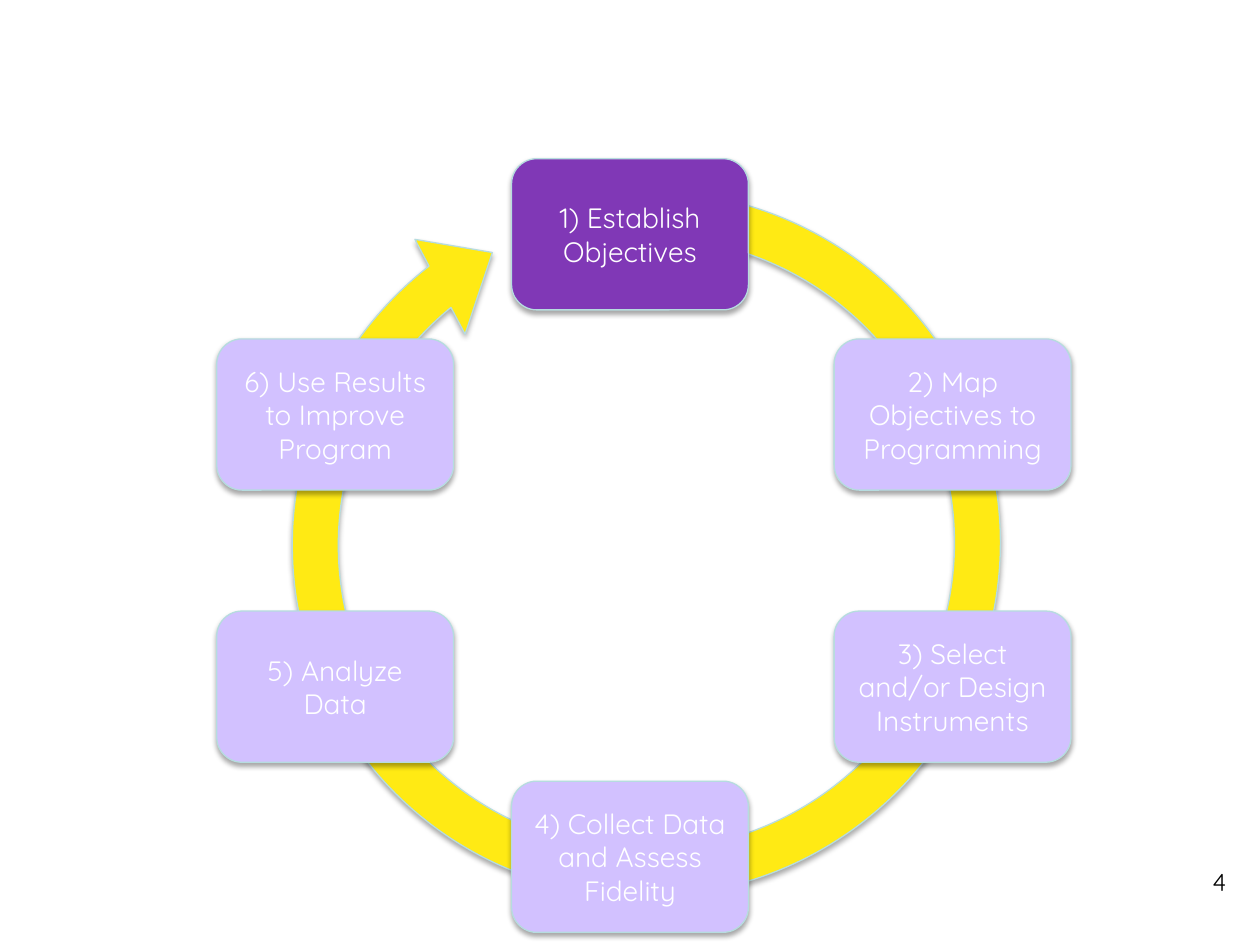
"""Build a slide showing a six-step programme assessment cycle."""
from dataclasses import dataclass

from lxml.etree import SubElement
from pptx import Presentation
from pptx.dml.color import RGBColor
from pptx.enum.shapes import MSO_AUTO_SHAPE_TYPE as ShapeType
from pptx.enum.text import MSO_ANCHOR as Anchor, PP_ALIGN as Align
from pptx.oxml.ns import qn
from pptx.shapes.autoshape import Shape
from pptx.slide import Slide
from pptx.text.text import TextFrame
from pptx.util import Inches, Pt

WHITE = RGBColor(0xFF, 0xFF, 0xFF)
BLACK = RGBColor(0x00, 0x00, 0x00)
YELLOW = RGBColor(0xFF, 0xEA, 0x14)
PURPLE = RGBColor(0x80, 0x38, 0xB6)
LILAC = RGBColor(0xD2, 0xC1, 0xFF)
PALE_TEAL = RGBColor(0xB6, 0xDC, 0xDF)

FONT = "Quicksand"
STEP_WIDTH, STEP_HEIGHT = 1.88, 1.2
LEFT, CENTRE, RIGHT = 1.72, 4.06, 6.62
TOP, UPPER, LOWER, BOTTOM = 1.26, 2.69, 4.85, 6.2
ARROW_ADJUSTMENTS = (0.06, 6.54, 204.56, 3.22, 0.07)


@dataclass(frozen=True)
class Step:
    text: str
    left: float
    top: float
    fill: RGBColor = LILAC


STEPS = (
    Step("1) Establish Objectives", CENTRE, TOP, PURPLE),
    Step("2) Map Objectives to Programming", RIGHT, UPPER),
    Step("3) Select and/or Design Instruments", RIGHT, LOWER),
    Step("4) Collect Data and Assess Fidelity", CENTRE, BOTTOM),
    Step("5) Analyze Data", LEFT, LOWER),
    Step("6) Use Results to Improve Program", LEFT, UPPER),
)


def write_text(frame: TextFrame, text: str, *, size: float, color: RGBColor,
               align: Align, anchor: Anchor) -> None:
    frame.word_wrap = True
    frame.vertical_anchor = anchor
    para = frame.paragraphs[0]
    para.alignment = align
    span = para.add_run()
    span.text = text
    span.font.name = FONT
    span.font.size = Pt(size)
    span.font.color.rgb = color


def add_shadow(shape: Shape) -> None:
    shape.shadow.inherit = False
    effects = shape.element.spPr.find(qn("a:effectLst"))
    shadow = SubElement(effects, qn("a:outerShdw"), blurRad=str(Pt(3.1)),
                        dist=str(Pt(1.8)), dir="5400000", rotWithShape="0")
    color = SubElement(shadow, qn("a:srgbClr"), val=str(BLACK))
    SubElement(color, qn("a:alpha"), val="35000")


def add_outlined_shape(page: Slide, kind: ShapeType, left: float, top: float,
                       width: float, height: float, fill: RGBColor) -> Shape:
    shape = page.shapes.add_shape(kind, Inches(left), Inches(top),
                                  Inches(width), Inches(height))
    shape.fill.solid()
    shape.fill.fore_color.rgb = fill
    shape.line.color.rgb = PALE_TEAL
    shape.line.width = Pt(0.75)
    add_shadow(shape)
    return shape


def add_cycle_arrow(page: Slide) -> None:
    arrow = add_outlined_shape(page, ShapeType.CIRCULAR_ARROW,
                               2.09, 1.26, 6.08, 6.11, YELLOW)
    arrow.rotation = 250.3
    for index, value in enumerate(ARROW_ADJUSTMENTS):
        arrow.adjustments[index] = value


def add_step(page: Slide, step: Step) -> None:
    box = add_outlined_shape(page, ShapeType.ROUNDED_RECTANGLE, step.left, step.top,
                             STEP_WIDTH, STEP_HEIGHT, step.fill)
    write_text(box.text_frame, step.text, size=16, color=WHITE,
               align=Align.CENTER, anchor=Anchor.MIDDLE)


def add_page_number(page: Slide, number: str) -> None:
    box = page.shapes.add_textbox(Inches(7.5), Inches(6.83), Inches(2.33), Inches(0.52))
    write_text(box.text_frame, number, size=14, color=BLACK,
               align=Align.RIGHT, anchor=Anchor.TOP)


def main() -> None:
    deck = Presentation()
    deck.slide_width, deck.slide_height = Inches(10), Inches(7.5)
    page = deck.slides.add_slide(deck.slide_layouts.get_by_name("Blank"))
    add_page_number(page, "4")
    add_cycle_arrow(page)
    for step in STEPS:
        add_step(page, step)
    deck.save("out.pptx")


if __name__ == "__main__":
    main()
